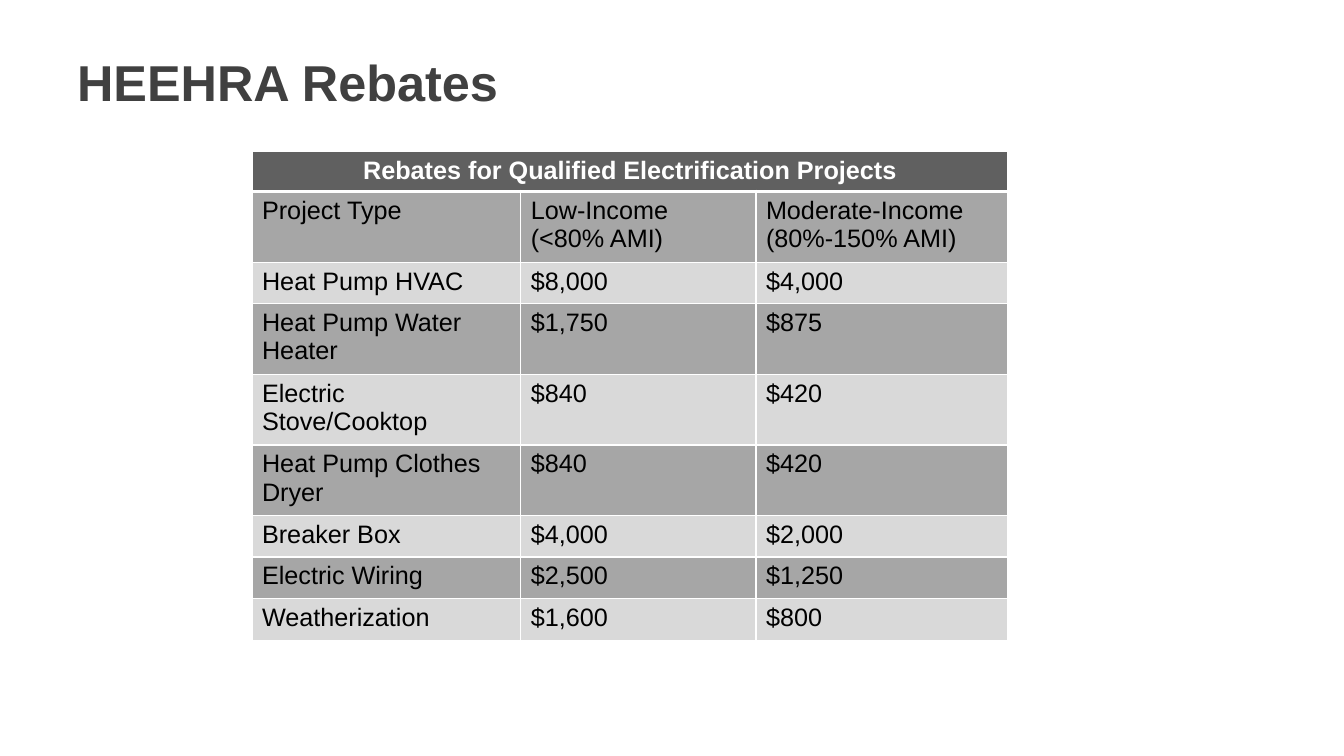
from lxml import etree
from pptx import Presentation, util as u
from pptx.dml.color import RGBColor
from pptx.enum import text
from pptx.oxml import ns

FONT = "Arial"
WHITE = RGBColor(0xFF, 0xFF, 0xFF)
BLACK = RGBColor(0, 0, 0)
TITLE_GRAY = RGBColor(0x40, 0x40, 0x40)
HEADER_GRAY = RGBColor(0x60, 0x60, 0x60)
DARK_BAND = RGBColor(0xA6, 0xA6, 0xA6)
LIGHT_BAND = RGBColor(0xD9, 0xD9, 0xD9)

WIDTH, HEIGHT = u.Inches(13.33), u.Inches(7.5)
COLUMN_SHARES = (0.2, 0.175, 0.1875)
HEADER_SHARE, ROW_SHARE = 0.043, 0.055

CAPTION = "Rebates for Qualified Electrification Projects"
REBATES = (
    ("Project Type", "Low-Income (<80% AMI)", "Moderate-Income (80%-150% AMI)"),
    ("Heat Pump HVAC", "$8,000", "$4,000"),
    ("Heat Pump Water Heater", "$1,750", "$875"),
    ("Electric Stove/Cooktop", "$840", "$420"),
    ("Heat Pump Clothes Dryer", "$840", "$420"),
    ("Breaker Box", "$4,000", "$2,000"),
    ("Electric Wiring", "$2,500", "$1,250"),
    ("Weatherization", "$1,600", "$800"),
)


def across(share):
    return round(WIDTH * share)


def down(share):
    return round(HEIGHT * share)


def write(tf, words, size=18, color=BLACK, bold=False, align=text.PP_ALIGN.LEFT):
    tf.word_wrap = True
    p = tf.paragraphs[0]
    p.alignment = align
    r = p.add_run()
    r.text = words
    r.font.name = FONT
    r.font.size = u.Pt(size)
    r.font.bold = bold
    r.font.color.rgb = color


def add_title(s, words):
    sp = s.shapes.add_textbox(across(0.05), down(0.05), across(0.9), down(0.116))
    sp.text_frame.vertical_anchor = text.MSO_ANCHOR.MIDDLE
    write(sp.text_frame, words, size=36, color=TITLE_GRAY, bold=True)


def set_borders(cell, top=1, bottom=1):
    tc_pr = cell._tc.get_or_add_tcPr()
    for side, points in (("L", 1), ("R", 1), ("T", top), ("B", bottom)):
        ln = etree.SubElement(tc_pr, ns.qn(f"a:ln{side}"), w=str(u.Pt(points)))
        fill = etree.SubElement(ln, ns.qn("a:solidFill"))
        etree.SubElement(fill, ns.qn("a:srgbClr"), val=str(WHITE))


def paint(cell, color, **borders):
    set_borders(cell, **borders)
    cell.fill.solid()
    cell.fill.fore_color.rgb = color


def add_rebate_table(s):
    rows = len(REBATES) + 1
    table = s.shapes.add_table(
        rows, len(COLUMN_SHARES), across(0.1875), down(0.2),
        across(sum(COLUMN_SHARES)), down(HEADER_SHARE + ROW_SHARE * len(REBATES)),
    ).table
    for column, share in zip(table.columns, COLUMN_SHARES):
        column.width = across(share)
    for i, row in enumerate(table.rows):
        row.height = down(ROW_SHARE if i else HEADER_SHARE)

    for cell in table.rows[0].cells:
        paint(cell, HEADER_GRAY, bottom=3)
    caption = table.cell(0, 0)
    caption.merge(table.cell(0, len(COLUMN_SHARES) - 1))
    write(caption.text_frame, CAPTION, color=WHITE, bold=True,
          align=text.PP_ALIGN.CENTER)

    for i, values in enumerate(REBATES, 1):
        for j, value in enumerate(values):
            cell = table.cell(i, j)
            paint(cell, DARK_BAND if i % 2 else LIGHT_BAND, top=3 if i == 1 else 1)
            write(cell.text_frame, value)


def main():
    prs = Presentation()
    prs.slide_width, prs.slide_height = WIDTH, HEIGHT
    s = prs.slides.add_slide(prs.slide_layouts[6])
    add_title(s, "HEEHRA Rebates")
    add_rebate_table(s)
    prs.save("out.pptx")


if __name__ == "__main__":
    main()
